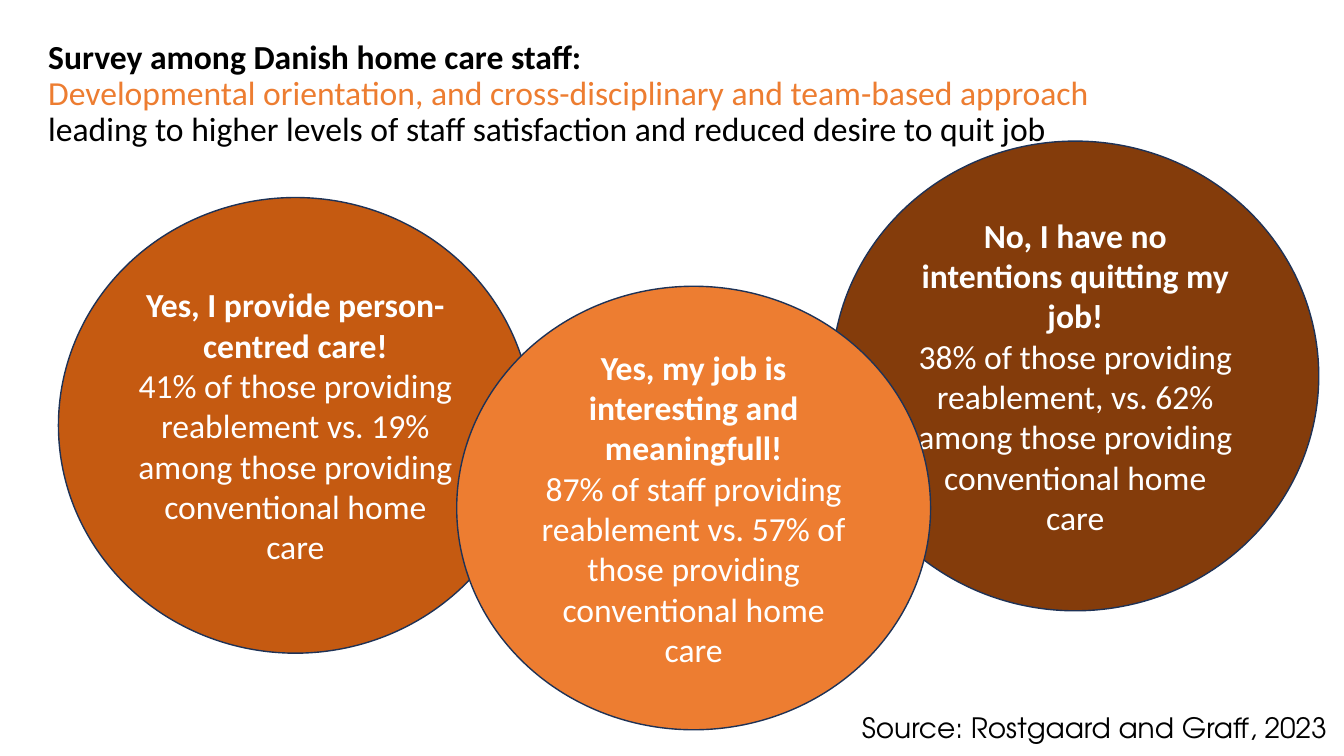
from pptx import Presentation
from pptx.dml.color import RGBColor
from pptx.enum.shapes import MSO_SHAPE
from pptx.enum.text import MSO_ANCHOR, PP_ALIGN
from pptx.util import Inches, Pt

TITLE = [
    ("Survey among Danish home care staff:", "000000", True),
    ("Developmental orientation, and cross-disciplinary and team-based approach",
     "ED7D31", False),
    ("leading to higher levels of staff satisfaction and reduced desire to quit job",
     "000000", False),
]
# left, top, width, height, fill, claim, figures; back to front
CIRCLES = [
    (8.25, 1.4, 4.83, 4.66, "843C0B", "No, I have no intentions quitting my job!",
     "38% of those providing reablement, vs. 62% among those providing "
     "conventional home care"),
    (0.58, 1.96, 4.7, 4.52, "C55A11", "Yes, I provide person-centred care!",
     "41% of those providing reablement vs. 19% among those providing "
     "conventional home care"),
    (4.53, 2.84, 4.7, 4.4, "ED7D31", "Yes, my job is interesting and meaningfull!",
     "87% of staff providing reablement vs. 57% of those providing "
     "conventional home care"),
]
SOURCE = [("Source: Rostgaard and Graff, 2023", "000000", False)]


def color(code):
    return RGBColor.from_string(code)


def write(shape, lines, size=24, font="Calibri", align=PP_ALIGN.LEFT,
          anchor=MSO_ANCHOR.TOP, spacing=None):
    """Fill a shape with one paragraph per (text, colour, bold) line."""
    frame = shape.text_frame
    frame.word_wrap = True
    frame.vertical_anchor = anchor
    for i, (text, code, bold) in enumerate(lines):
        para = frame.paragraphs[0] if i == 0 else frame.add_paragraph()
        para.alignment = align
        para.line_spacing = spacing
        run = para.add_run()
        run.text = text
        run.font.name = font
        run.font.size = Pt(size)
        run.font.bold = bold
        run.font.color.rgb = color(code)


deck = Presentation()
deck.slide_width, deck.slide_height = Inches(13.33), Inches(7.5)
slide = deck.slides.add_slide(deck.slide_layouts[6])
shapes = slide.shapes

source = shapes.add_textbox(Inches(8.45), Inches(7.04), Inches(5.09), Inches(0.71))
write(source, SOURCE, size=20, font="TeX Gyre Adventor", spacing=0.9)

for *place, fill, claim, figures in CIRCLES:
    circle = shapes.add_shape(MSO_SHAPE.OVAL, *map(Inches, place))
    circle.shadow.inherit = False
    circle.fill.solid()
    circle.fill.fore_color.rgb = color(fill)
    circle.line.color.rgb = color("1E3256")
    circle.line.width = Pt(1)
    write(circle, [(claim, "FFFFFF", True), (figures, "FFFFFF", False)],
          align=PP_ALIGN.CENTER, anchor=MSO_ANCHOR.MIDDLE)

title = shapes.add_textbox(Inches(0.38), Inches(0.4), Inches(11.56), Inches(1.45))
title.text_frame.margin_top = 0
write(title, TITLE, spacing=0.9)

deck.save("out.pptx")
